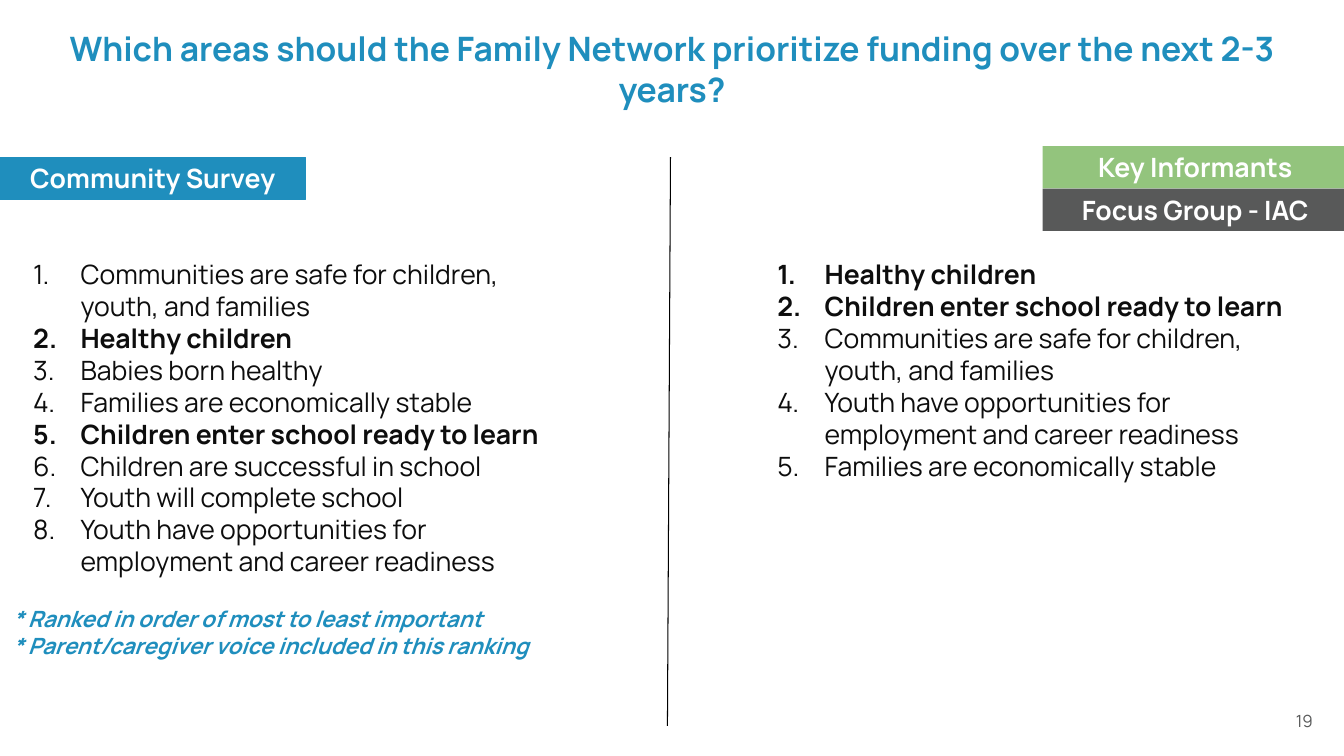
"""Build the slide that compares funding priorities from two sources."""
import pptx
import pptx.dml.color
import pptx.enum.shapes
import pptx.enum.text
import pptx.oxml.ns
import pptx.util
from lxml import etree

Inches = pptx.util.Inches
Pt = pptx.util.Pt
RGBColor = pptx.dml.color.RGBColor
ALIGN = pptx.enum.text.PP_ALIGN
ANCHOR = pptx.enum.text.MSO_ANCHOR

BLUE = RGBColor(0x1F, 0x8E, 0xBD)
GREEN = RGBColor(0x93, 0xC4, 0x7D)
GRAY = RGBColor(0x58, 0x59, 0x59)
INK = RGBColor(0x0D, 0x0D, 0x0D)
WHITE = RGBColor(0xFF, 0xFF, 0xFF)
BLACK = RGBColor(0, 0, 0)

FONT = "Manrope"
SHARED = ("Healthy children", "Children enter school ready to learn")
SURVEY = (
    "Communities are safe for children, youth, and families",
    "Healthy children",
    "Babies born healthy",
    "Families are economically stable",
    "Children enter school ready to learn",
    "Children are successful in school",
    "Youth will complete school",
    "Youth have opportunities for employment and career readiness",
)
INFORMANTS = (
    "Healthy children",
    "Children enter school ready to learn",
    "Communities are safe for children, youth, and families",
    "Youth have opportunities for employment and career readiness",
    "Families are economically stable",
)
NOTE = (
    "* Ranked in order of most to least important\n"
    "* Parent/caregiver voice included in this ranking"
)


def set_margins(frame, side, top, bottom):
    """Wrap the text and set its insets in inches."""
    frame.word_wrap = True
    frame.margin_left = frame.margin_right = Inches(side)
    frame.margin_top = Inches(top)
    frame.margin_bottom = Inches(bottom)


def write(para, text, size, color, bold=False, italic=False):
    """Put formatted text into a paragraph."""
    para.text = text
    for span in para.runs:
        span.font.name = FONT
        span.font.size = Pt(size)
        span.font.color.rgb = color
        span.font.bold = bold
        span.font.italic = italic


def add_text(page, place, margins):
    """Add an empty text box and return its frame."""
    frame = page.shapes.add_textbox(*map(Inches, place)).text_frame
    set_margins(frame, *margins)
    return frame


def number(para):
    """Turn a paragraph into an automatically numbered item."""
    props = para._p.get_or_add_pPr()
    props.set("marL", str(Inches(0.67)))
    props.set("indent", str(Inches(-0.47)))
    color = etree.SubElement(props, pptx.oxml.ns.qn("a:buClr"))
    etree.SubElement(color, pptx.oxml.ns.qn("a:srgbClr"), val=str(INK))
    etree.SubElement(props, pptx.oxml.ns.qn("a:buFont"), typeface=FONT)
    etree.SubElement(props, pptx.oxml.ns.qn("a:buAutoNum"), type="arabicPeriod")


def add_ranking(page, place, items):
    """Add a numbered list with the shared priorities in bold."""
    frame = add_text(page, place, (0.13, 0.13, 0.13))
    for index, item in enumerate(items):
        para = frame.add_paragraph() if index else frame.paragraphs[0]
        number(para)
        write(para, item, 19, INK, bold=item in SHARED)
    return frame


def add_label(page, left, top, text, color):
    """Add a filled source label and return it."""
    label = page.shapes.add_shape(
        pptx.enum.shapes.MSO_SHAPE.RECTANGLE,
        Inches(left), Inches(top), Inches(3.03), Inches(0.42),
    )
    label.shadow.inherit = False
    label.fill.solid()
    label.fill.fore_color.rgb = color
    label.line.fill.background()
    frame = label.text_frame
    set_margins(frame, 0.1, 0.05, 0.05)
    frame.vertical_anchor = ANCHOR.TOP
    write(frame.paragraphs[0], text, 19, WHITE, bold=True)
    frame.paragraphs[0].alignment = ALIGN.CENTER
    return label


def add_divider(page):
    """Add the thin line between the two rankings."""
    divider = page.shapes.add_connector(
        pptx.enum.shapes.MSO_CONNECTOR.STRAIGHT,
        Inches(6.65), Inches(1.56), Inches(6.62), Inches(7.2),
    )
    divider.line.color.rgb = BLACK
    divider.line.width = Pt(0.75)
    etree.SubElement(divider._element.spPr, pptx.oxml.ns.qn("a:effectLst"))


def main():
    """Build and save the deck."""
    deck = pptx.Presentation()
    deck.slide_width = Inches(13.33)
    deck.slide_height = Inches(7.5)
    page = deck.slides.add_slide(deck.slide_layouts[6])

    page_number = add_text(page, (10.12, 6.95, 3, 0.4), (0.1, 0.05, 0.05))
    page_number.vertical_anchor = ANCHOR.MIDDLE
    write(page_number.paragraphs[0], "19", 12, GRAY)
    page_number.paragraphs[0].alignment = ALIGN.RIGHT

    title = add_text(page, (0.18, 0.27, 12.97, 0.9), (0, 0.01, 0))
    write(
        title.paragraphs[0],
        "Which areas should the Family Network prioritize funding over the next 2-3 years?",
        24, BLUE, bold=True,
    )
    title.paragraphs[0].alignment = ALIGN.CENTER

    survey = add_ranking(page, (0, 2.43, 5.9, 4.29), SURVEY)
    note = survey.add_paragraph()
    write(note, NOTE, 16, BLUE, bold=True, italic=True)
    note.space_before = Pt(20)
    add_ranking(page, (7.38, 2.43, 5.6, 2.83), INFORMANTS)

    survey_label = add_label(page, 0, 1.56, "Community Survey", BLUE)
    survey_label.line.color.rgb = BLUE
    survey_label.line.width = Pt(0.75)
    add_label(page, 10.34, 1.45, "Key Informants", GREEN)
    add_label(page, 10.34, 1.87, "Focus Group - IAC", GRAY)
    add_divider(page)

    deck.save("out.pptx")


if __name__ == "__main__":
    main()
